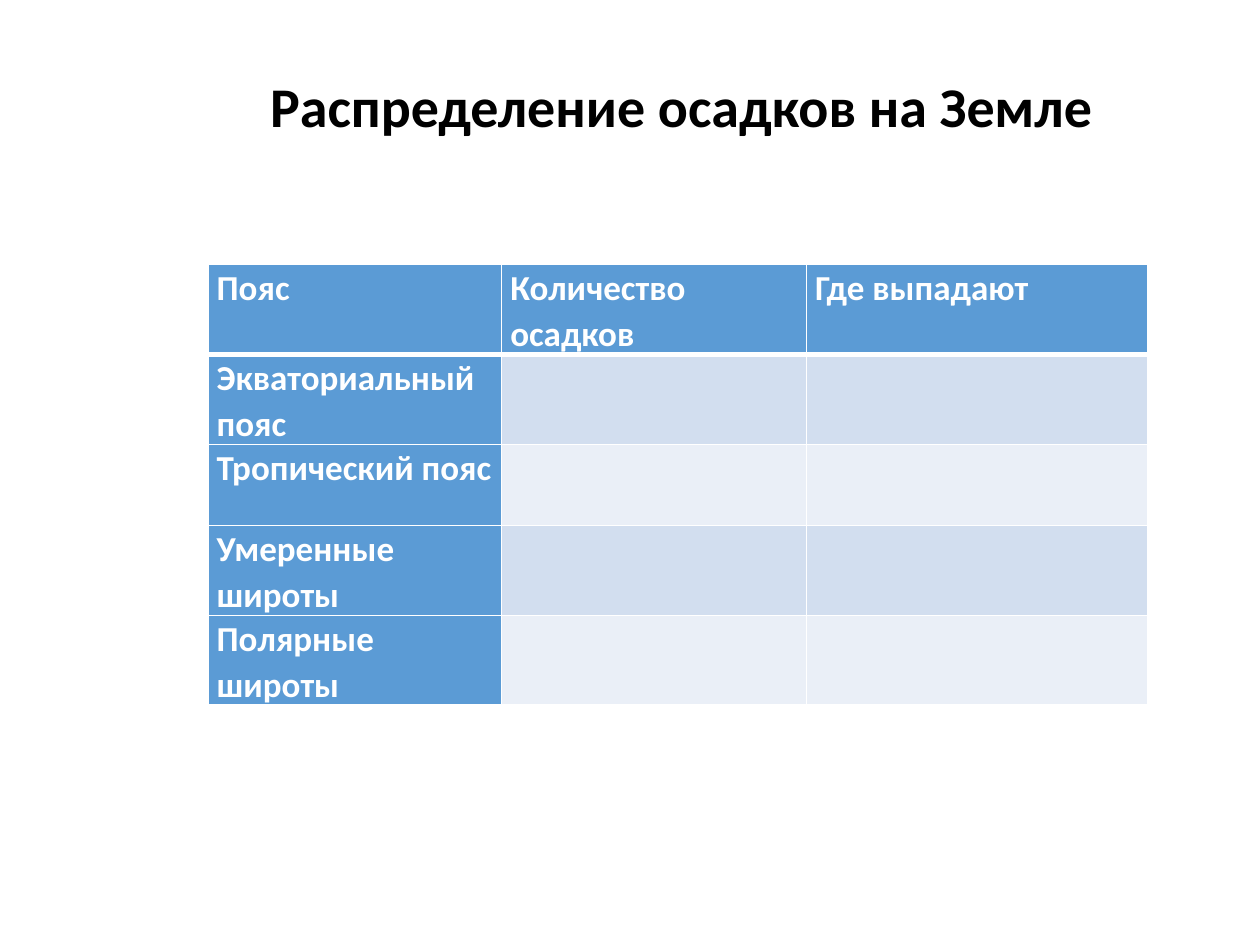
import dataclasses

import lxml.etree
import pptx
import pptx.dml.color
import pptx.enum.text
import pptx.oxml.ns
import pptx.util


@dataclasses.dataclass(frozen=True)
class Theme:
    font: str = "Calibri"
    ink: str = "000000"
    white: str = "FFFFFF"
    head: str = "5B9BD5"
    bands: tuple = ("D2DEEF", "EAEFF7")
    title: int = 32
    body: int = 20
    thin: int = 1
    thick: int = 3


class Deck:
    def __init__(self, theme):
        self.theme = theme
        self.show = pptx.Presentation()
        self.show.slide_width = pptx.util.Inches(10)
        self.show.slide_height = pptx.util.Inches(7.5)
        self.slide = self.show.slides.add_slide(self.show.slide_layouts[6])

    def box(self, left, top, width, height):
        """Turn percentages of the slide's size into lengths."""
        wide, high = self.show.slide_width, self.show.slide_height
        return [int(share * size / 100) for share, size in
                ((left, wide), (top, high), (width, wide), (height, high))]

    def label(self, frame, text, size, color, space):
        frame.text = text
        para = frame.paragraphs[0]
        para.line_spacing = space
        for run in para.runs:
            run.font.name = self.theme.font
            run.font.size = pptx.util.Pt(size)
            run.font.bold = True
            run.font.color.rgb = pptx.dml.color.RGBColor.from_string(color)
        return para

    def title(self, text, *area):
        frame = self.slide.shapes.add_textbox(*self.box(*area)).text_frame
        frame.word_wrap = True
        frame.vertical_anchor = pptx.enum.text.MSO_ANCHOR.MIDDLE
        para = self.label(frame, text, self.theme.title, self.theme.ink, 0.9)
        para.alignment = pptx.enum.text.PP_ALIGN.CENTER

    def edge(self, cell, side, width):
        name = pptx.oxml.ns.qn
        line = lxml.etree.SubElement(cell._tc.get_or_add_tcPr(), name(f"a:ln{side}"),
                                     w=str(pptx.util.Pt(width)))
        fill = lxml.etree.SubElement(line, name("a:solidFill"))
        lxml.etree.SubElement(fill, name("a:srgbClr"), val=self.theme.white)

    def cell(self, cell, text, color, widths):
        """Style one cell; widths maps each side to its line width."""
        for side, width in widths.items():
            self.edge(cell, side, width)
        cell.fill.solid()
        cell.fill.fore_color.rgb = pptx.dml.color.RGBColor.from_string(color)
        cell.margin_left = cell.margin_right = pptx.util.Inches(0.07)
        cell.margin_top = cell.margin_bottom = 0
        if text:
            self.label(cell.text_frame, text, self.theme.body, self.theme.white, 1.07)

    def table(self, heads, zones, shares, *area):
        """Add a table with a head row, a head column and banded empty cells."""
        look = self.theme
        rows = [heads] + [[zone] + [""] * (len(heads) - 1) for zone in zones]
        spot = self.box(*area)
        grid = self.slide.shapes.add_table(len(rows), len(heads), *spot).table
        for col, share in zip(grid.columns, shares):
            col.width = int(spot[2] * share / sum(shares))
        for r, row in enumerate(rows):
            widths = dict.fromkeys("LRTB", look.thin)
            if r == 0:
                widths["B"] = look.thick
            elif r == 1:
                widths["T"] = look.thick
            for c, text in enumerate(row):
                color = look.bands[(r - 1) % 2] if r and c else look.head
                self.cell(grid.cell(r, c), text, color, widths)

    def save(self):
        self.show.save("out.pptx")


def main():
    deck = Deck(Theme())
    deck.title("Распределение осадков на Земле", 14.9, 1.87, 78.4, 19.47)
    deck.table(
        ["Пояс", "Количество осадков", "Где выпадают"],
        ["Экваториальный пояс", "Тропический пояс", "Умеренные широты", "Полярные широты"],
        [2.33, 2.42, 2.71],
        16.5, 28, 74.6, 42.8)
    deck.save()


if __name__ == "__main__":
    main()
